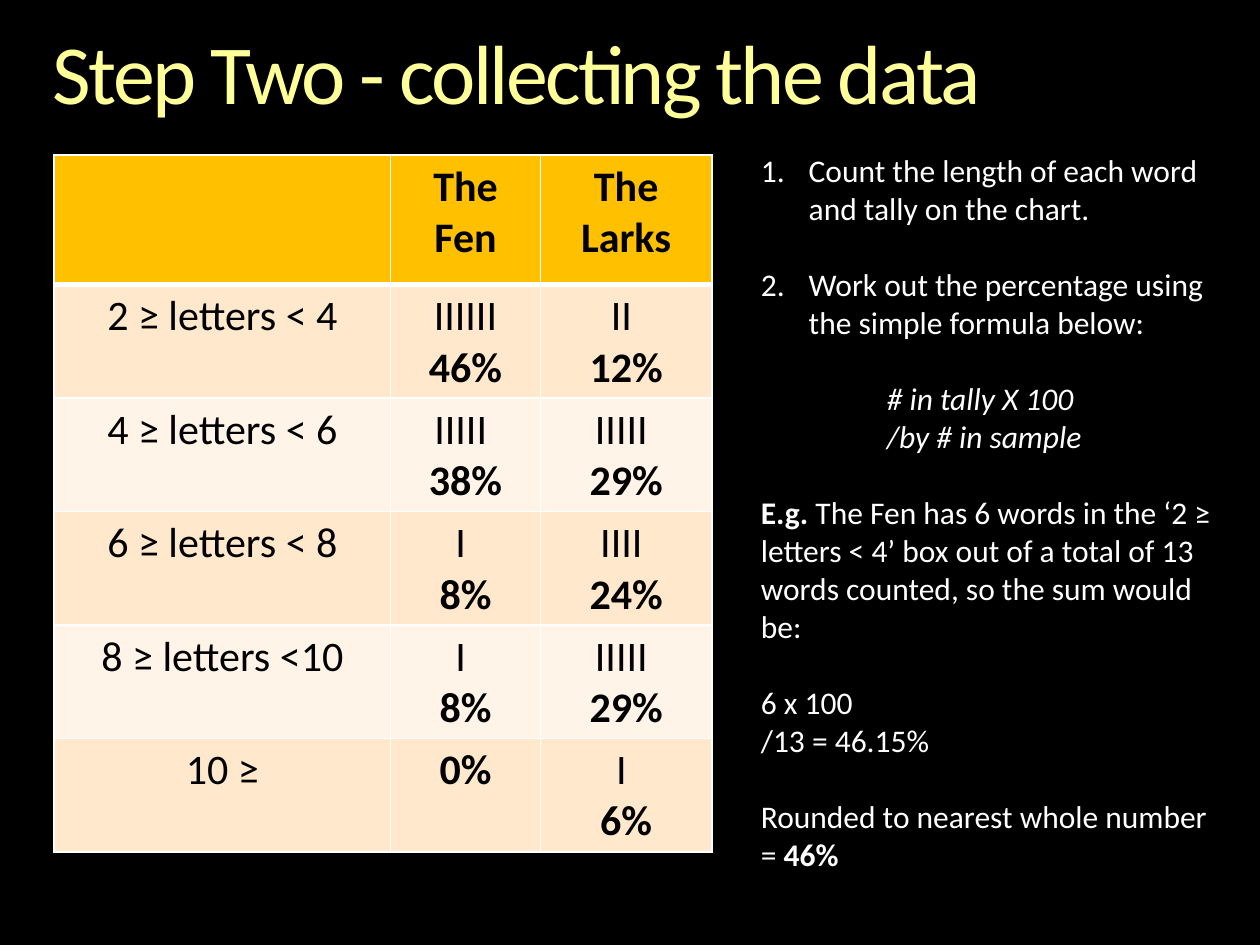
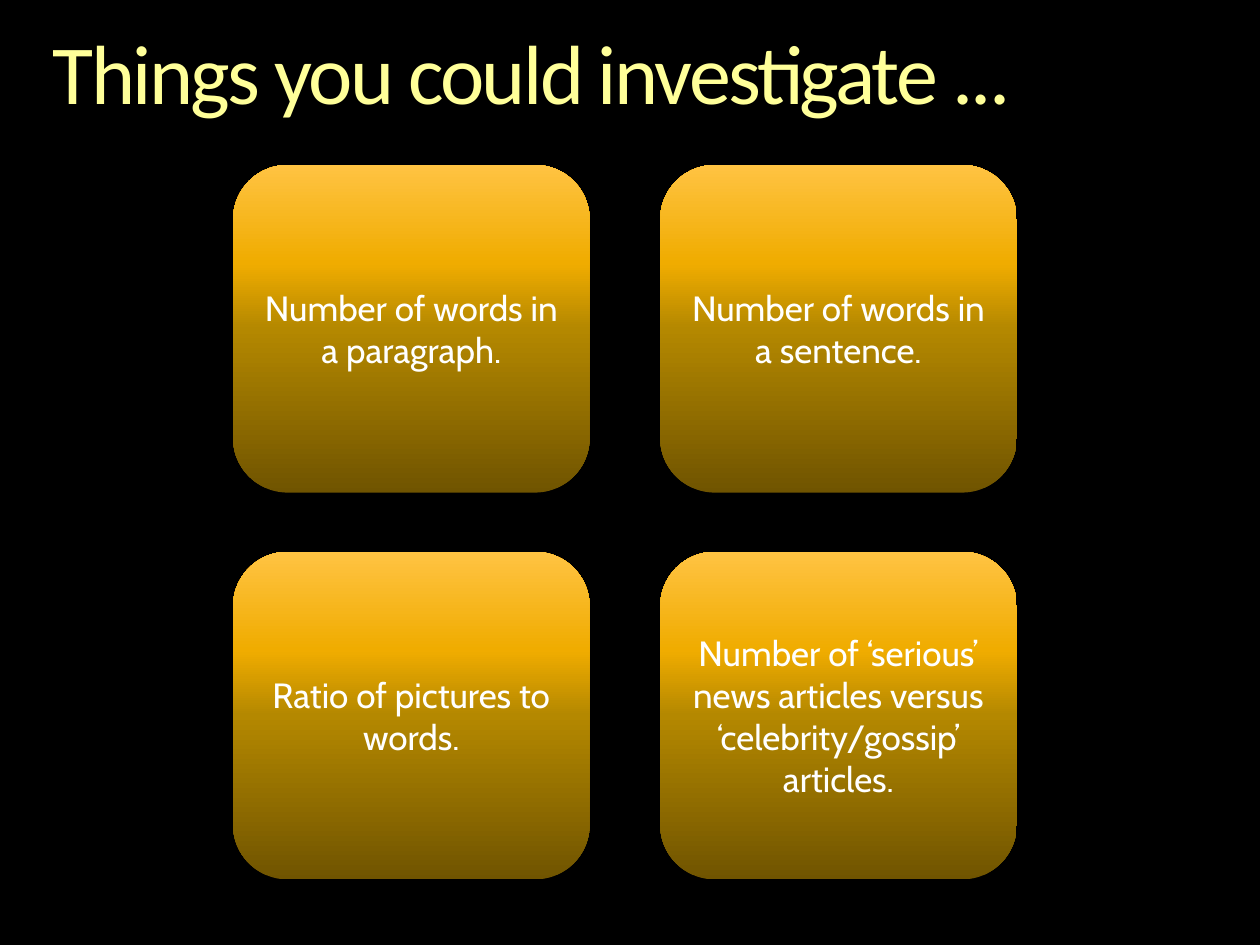
from lxml import etree
from pptx import Presentation
from pptx.dml.color import RGBColor
from pptx.enum.shapes import MSO_SHAPE
from pptx.enum.text import MSO_ANCHOR, PP_ALIGN
from pptx.oxml.ns import qn
from pptx.util import Inches, Pt

ROUNDED = MSO_SHAPE.ROUNDED_RECTANGLE
CENTER = PP_ALIGN.CENTER
MIDDLE = MSO_ANCHOR.MIDDLE

BLACK, WHITE, TITLE_YELLOW = "000000", "FFFFFF", "FFFF99"
HEADER_FILL = "FFC000"
BAND_FILLS = ["FFE8CC", "FFF4E7"]
TILE_STOPS = [(0, "705400"), (50, "B48800"), (70, "F0AC00"), (100, "FFC342")]

TITLE_FONT = dict(name="Calibri", size=Pt(48))
TABLE_FONT = dict(name="Calibri", size=Pt(24))
NOTES_FONT = dict(name="Calibri", size=Pt(18))
TILE_FONT = dict(name="Cabin", size=Pt(20))
BOLD, ITALIC = dict(bold=True), dict(italic=True)

COL_WIDTHS = [2.67, 1.19, 1.36]
HEADER_HEIGHT, ROW_HEIGHT = 1.03, 0.9
HEADERS = ["", "The Fen", "The Larks"]
# Each row: word length, then (tally, percentage) for each newspaper
TALLIES = [
    ("2 ≥ letters < 4", ("IIIIII", "46%"), ("II ", "12%")),
    ("4 ≥ letters < 6", ("IIIII ", "38%"), ("IIIII ", "29%")),
    ("6 ≥ letters < 8", ("I ", "8%"), ("IIII ", "24%")),
    ("8 ≥ letters <10", ("I ", "8%"), ("IIIII ", "29%")),
    ("10 ≥", ("", "0%"), ("I ", "6%")),
]

LINE_GAP = 22
NUMBERED, INDENTED, PLAIN = "numbered", "indented", "plain"
# Each paragraph: kind, space before in points, runs
NOTES = [
    (NUMBERED, 0, [("Count the length of each word and tally on the chart.", {})]),
    (NUMBERED, LINE_GAP, [("Work out the percentage using the simple formula below:", {})]),
    (INDENTED, LINE_GAP, [("# in tally X 100", ITALIC)]),
    (INDENTED, 0, [("/by # in sample", ITALIC)]),
    (PLAIN, LINE_GAP, [
        ("E.g. ", BOLD),
        ("The Fen has 6 words in the ‘2 ≥ letters < 4’ box out of a total "
         "of 13 words counted, so the sum would be:", {}),
    ]),
    (PLAIN, LINE_GAP, [("6 x 100", {})]),
    (PLAIN, 0, [("/13 = 46.15%", {})]),
    (PLAIN, LINE_GAP, [("Rounded to nearest whole number = ", {}), ("46%", BOLD)]),
]

IDEAS = [
    "Number of words in a paragraph.",
    "Number of words in a sentence.",
    "Ratio of pictures to words.",
    "Number of ‘serious’ news articles versus ‘celebrity/gossip’ articles.",
]
TILE_LEFT, TILE_TOP, TILE_W, TILE_H = 1.85, 1.31, 2.83, 2.6
TILE_STEP_X, TILE_STEP_Y = 3.39, 3.07


def rgb(value):
    return RGBColor.from_string(value)


def add_run(p, text, color, *formats):
    r = p.add_run()
    r.text = text
    r.font.color.rgb = rgb(color)
    for values in formats:
        for name, value in values.items():
            setattr(r.font, name, value)
    return r


def add_paragraph(tf, first):
    return tf.paragraphs[0] if first else tf.add_paragraph()


def add_text_box(slide, left, top, width, height):
    box = slide.shapes.add_textbox(Inches(left), Inches(top), Inches(width), Inches(height))
    box.text_frame.word_wrap = True
    return box.text_frame


def add_titled_slide(prs, title):
    slide = prs.slides.add_slide(prs.slide_layouts[6])
    fill = slide.background.fill
    fill.solid()
    fill.fore_color.rgb = rgb(BLACK)
    tf = add_text_box(slide, 0.42, 0.25, 9.17, 0.73)
    tf.margin_left = tf.margin_right = tf.margin_top = tf.margin_bottom = 0
    p = tf.paragraphs[0]
    p.line_spacing = 0.9
    r = add_run(p, title, TITLE_YELLOW, TITLE_FONT)
    r.font._element.set("spc", "-150")
    return slide


def style_cell(cell, fill, top=1, bottom=1):
    """Give a cell white borders, widths in points, and a solid fill."""
    tcPr = cell._tc.get_or_add_tcPr()
    for side, width in (("L", 1), ("R", 1), ("T", top), ("B", bottom)):
        ln = etree.SubElement(tcPr, qn(f"a:ln{side}"), w=str(Pt(width)))
        solid = etree.SubElement(ln, qn("a:solidFill"))
        etree.SubElement(solid, qn("a:srgbClr"), val=WHITE)
    cell.fill.solid()
    cell.fill.fore_color.rgb = rgb(fill)


def write_cell(cell, lines):
    """Write centred lines, each a pair of text and format."""
    for i, (text, values) in enumerate(lines):
        p = add_paragraph(cell.text_frame, i == 0)
        p.alignment = CENTER
        add_run(p, text, BLACK, TABLE_FONT, dict(bold=False), values)


def add_tally_table(slide):
    height = HEADER_HEIGHT + ROW_HEIGHT * len(TALLIES)
    table = slide.shapes.add_table(
        len(TALLIES) + 1, len(HEADERS), Inches(0.43), Inches(1.23),
        Inches(sum(COL_WIDTHS)), Inches(height)).table
    table.horz_banding = False
    for column, width in zip(table.columns, COL_WIDTHS):
        column.width = Inches(width)
    for i, row in enumerate(table.rows):
        row.height = Inches(ROW_HEIGHT if i else HEADER_HEIGHT)
    for c, header in enumerate(HEADERS):
        style_cell(table.cell(0, c), HEADER_FILL, bottom=3)
        if header:
            write_cell(table.cell(0, c), [(header, BOLD)])
    for i, (label, *results) in enumerate(TALLIES):
        columns = [[(label, {})]]
        for tally, percent in results:
            columns.append([(tally, {})] * bool(tally) + [(percent, BOLD)])
        for c, lines in enumerate(columns):
            cell = table.cell(i + 1, c)
            style_cell(cell, BAND_FILLS[i % 2], top=1 if i else 3)
            write_cell(cell, lines)


def indent(p, left, hanging=0):
    pPr = p._p.get_or_add_pPr()
    pPr.set("marL", str(Inches(left)))
    pPr.set("indent", str(-Inches(hanging)))
    return pPr


def add_notes(slide):
    tf = add_text_box(slide, 5.94, 1.15, 3.78, 6.16)
    for i, (kind, gap, runs) in enumerate(NOTES):
        p = add_paragraph(tf, i == 0)
        if gap:
            p.space_before = Pt(gap)
        if kind == NUMBERED:
            pPr = indent(p, 0.38, 0.38)
            etree.SubElement(pPr, qn("a:buFont"), typeface="+mj-lt")
            etree.SubElement(pPr, qn("a:buAutoNum"), type="arabicPeriod")
        elif kind == INDENTED:
            indent(p, 1)
        for text, values in runs:
            add_run(p, text, WHITE, NOTES_FONT, values)


def fill_gradient(sp, stops, angle):
    """Fill with any number of (percent, colour) stops; angle is anticlockwise."""
    sp.fill.gradient()
    sp.fill.gradient_angle = angle
    gsLst = sp._element.spPr.find(qn("a:gradFill")).find(qn("a:gsLst"))
    for gs in list(gsLst):
        gsLst.remove(gs)
    for percent, color in stops:
        gs = etree.SubElement(gsLst, qn("a:gs"), pos=str(percent * 1000))
        etree.SubElement(gs, qn("a:srgbClr"), val=color)


def add_tile(slide, left, top, text):
    sp = slide.shapes.add_shape(
        ROUNDED, Inches(left), Inches(top), Inches(TILE_W), Inches(TILE_H))
    sp.shadow.inherit = False
    sp.line.fill.background()
    fill_gradient(sp, TILE_STOPS, 90)
    tf = sp.text_frame
    tf.word_wrap = True
    tf.vertical_anchor = MIDDLE
    p = tf.paragraphs[0]
    p.alignment = CENTER
    add_run(p, text, WHITE, TILE_FONT)


def main():
    prs = Presentation()
    prs.slide_width, prs.slide_height = Inches(10), Inches(7.5)

    slide = add_titled_slide(prs, "Step Two - collecting the data")
    add_tally_table(slide)
    add_notes(slide)

    slide = add_titled_slide(prs, "Things you could investigate ...")
    for i, idea in enumerate(IDEAS):
        row, col = divmod(i, 2)
        add_tile(slide, TILE_LEFT + col * TILE_STEP_X, TILE_TOP + row * TILE_STEP_Y, idea)

    prs.save("out.pptx")


if __name__ == "__main__":
    main()
